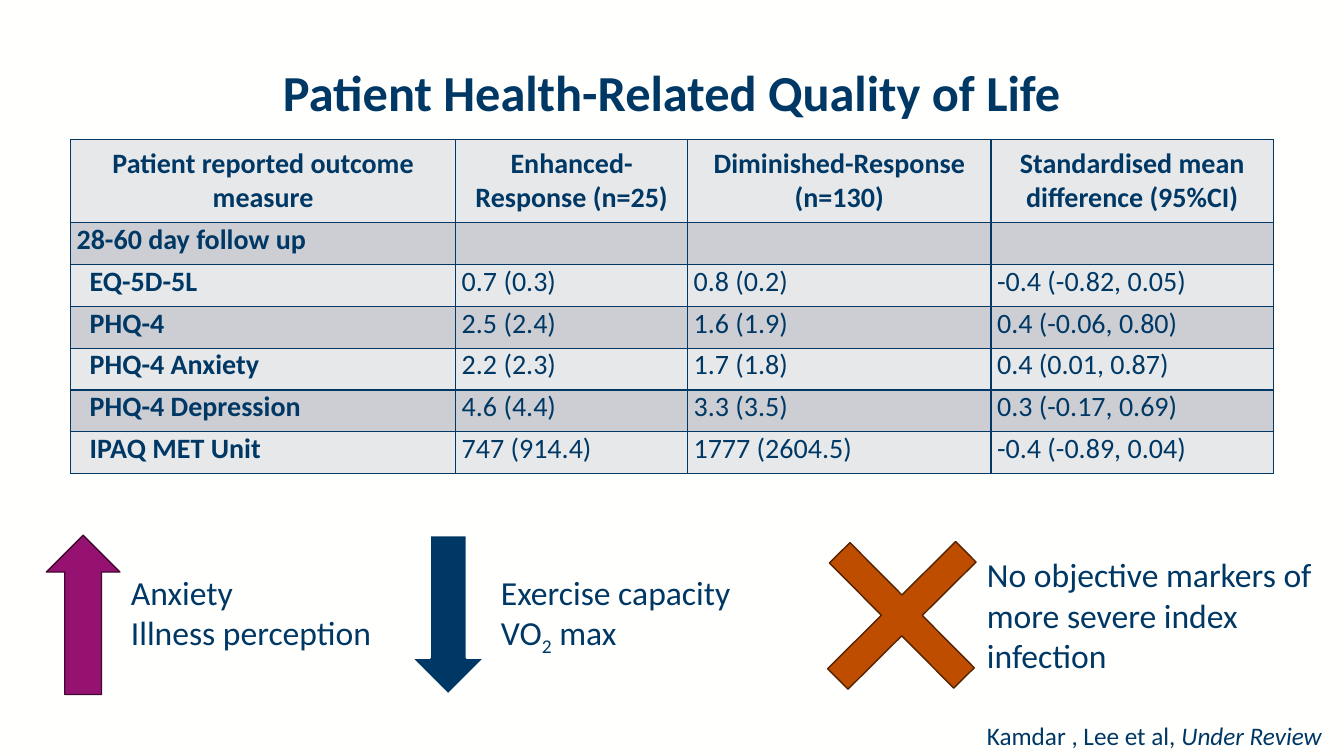
from dataclasses import dataclass

from lxml.etree import SubElement
from pptx import Presentation
from pptx.dml.color import RGBColor
from pptx.enum.shapes import MSO_SHAPE
from pptx.enum.text import MSO_ANCHOR, MSO_AUTO_SIZE, PP_ALIGN
from pptx.oxml.ns import qn
from pptx.util import Inches, Pt


@dataclass(frozen=True)
class Theme:
    font: str = "Calibri"
    navy: str = "003865"
    page: str = "FFFFFE"
    light_row: str = "E7E8EA"
    dark_row: str = "CCCED3"
    purple: str = "951271"
    purple_edge: str = "410832"
    orange: str = "BE4D00"
    orange_edge: str = "532200"
    title_size: int = 36
    message_size: int = 24
    table_size: int = 20
    citation_size: int = 18


THEME = Theme()

COLUMN_WIDTHS = (3.82, 2.3, 3.01, 2.8)
HEADER_HEIGHT, ROW_HEIGHT = 0.83, 0.415
CELL_INSET, MEASURE_INDENT = 0.06, 0.13
HEADERS = (
    "Patient reported outcome measure",
    "Enhanced-Response (n=25)",
    "Diminished-Response (n=130)",
    "Standardised mean difference (95%CI)",
)
OUTCOMES = (
    ("28-60 day follow up", "", "", ""),
    ("EQ-5D-5L", "0.7 (0.3)", "0.8 (0.2)", "-0.4 (-0.82, 0.05)"),
    ("PHQ-4", "2.5 (2.4)", "1.6 (1.9)", "0.4 (-0.06, 0.80)"),
    ("PHQ-4 Anxiety", "2.2 (2.3)", "1.7 (1.8)", "0.4 (0.01, 0.87)"),
    ("PHQ-4 Depression", "4.6 (4.4)", "3.3 (3.5)", "0.3 (-0.17, 0.69)"),
    ("IPAQ MET Unit", "747 (914.4)", "1777 (2604.5)", "-0.4 (-0.89, 0.04)"),
)


def color(value):
    return RGBColor.from_string(value)


def place(box):
    return [Inches(length) for length in box]


def format_spans(frame, size, bold=False):
    for para in frame.paragraphs:
        for span in para.runs:
            span.font.name = THEME.font
            span.font.size = Pt(size)
            span.font.bold = bold
            span.font.color.rgb = color(THEME.navy)


def add_title(page, box, text):
    title = page.shapes.title
    title.left, title.top, title.width, title.height = place(box)
    frame = title.text_frame
    frame.text = text
    frame.auto_size = MSO_AUTO_SIZE.NONE
    frame.vertical_anchor = MSO_ANCHOR.MIDDLE
    frame.paragraphs[0].alignment = PP_ALIGN.CENTER
    format_spans(frame, THEME.title_size, bold=True)


def add_text(page, box, lines, size):
    """Each line is a list of spans: (text, style), style being '', 'italic' or 'subscript'."""
    frame = page.shapes.add_textbox(*place(box)).text_frame
    frame.word_wrap = True
    frame.margin_right = 0
    for number, line in enumerate(lines):
        para = frame.add_paragraph() if number else frame.paragraphs[0]
        for text, style in line:
            span = para.add_run()
            span.text = text
            if style == "italic":
                span.font.italic = True
            elif style == "subscript":
                span.font._element.set("baseline", "-25000")
    format_spans(frame, size)


def add_borders(cell):
    properties = cell._tc.get_or_add_tcPr()
    for side in ("a:lnL", "a:lnR", "a:lnT", "a:lnB"):
        line = SubElement(properties, qn(side), w=str(Pt(1)))
        fill = SubElement(line, qn("a:solidFill"))
        SubElement(fill, qn("a:srgbClr"), val=THEME.navy)


def add_outcome_table(page, box):
    rows = (HEADERS, *OUTCOMES)
    table = page.shapes.add_table(len(rows), len(HEADERS), *place(box)).table
    for column, width in zip(table.columns, COLUMN_WIDTHS):
        column.width = Inches(width)
    for row_number, values in enumerate(rows):
        is_header = row_number == 0
        table.rows[row_number].height = Inches(HEADER_HEIGHT if is_header else ROW_HEIGHT)
        for column_number, text in enumerate(values):
            cell = table.cell(row_number, column_number)
            is_measure = column_number == 0
            indent = MEASURE_INDENT if is_measure and row_number > 1 else 0
            cell.margin_left = Inches(CELL_INSET + indent)
            cell.margin_right = Inches(CELL_INSET)
            cell.margin_top = cell.margin_bottom = 0
            add_borders(cell)
            cell.fill.solid()
            cell.fill.fore_color.rgb = color(THEME.dark_row if row_number % 2 else THEME.light_row)
            cell.text_frame.text = text
            format_spans(cell.text_frame, THEME.table_size, bold=is_header or is_measure)
            if is_header:
                cell.vertical_anchor = MSO_ANCHOR.MIDDLE
                cell.text_frame.paragraphs[0].alignment = PP_ALIGN.CENTER


def add_symbol(page, box, preset, fill, edge, edge_width=1, rotation=0):
    symbol = page.shapes.add_shape(preset, *place(box))
    symbol.shadow.inherit = False
    symbol.rotation = rotation
    symbol.fill.solid()
    symbol.fill.fore_color.rgb = color(fill)
    symbol.line.color.rgb = color(edge)
    symbol.line.width = Pt(edge_width)
    return symbol


def add_findings(page, box):
    left, top, width, height = box
    arrow_width, text_width = 0.73, 3.64
    text_top = top + 0.31

    # Raised anxiety and illness perception
    add_symbol(page, (left, top, arrow_width, height), MSO_SHAPE.UP_ARROW,
               THEME.purple, THEME.purple_edge)
    add_text(page, (left + 0.74, text_top, text_width, 0.91),
             [[("Anxiety", "")], [("Illness perception", "")]], THEME.message_size)

    # Reduced exercise capacity
    add_symbol(page, (left + 3.62, top, arrow_width, height), MSO_SHAPE.UP_ARROW,
               THEME.navy, THEME.page, edge_width=1.5, rotation=180)
    add_text(page, (left + 4.41, text_top, text_width, 0.91),
             [[("Exercise capacity", "")],
              [("VO", ""), ("2", "subscript"), (" max", "")]], THEME.message_size)

    # No sign of a more severe infection
    cross = add_symbol(page, (left + 7.61, top - 0.1, 1.75, 1.79), MSO_SHAPE.QUAD_ARROW,
                       THEME.orange, THEME.orange_edge, rotation=45.2)
    for number, value in enumerate((0.164, 0.082, 0)):
        cross.adjustments[number] = value
    add_text(page, (left + width - text_width, top + 0.14, text_width, 1.31),
             [[("No objective markers of more severe index infection", "")]],
             THEME.message_size)


def build_results_page(deck):
    page = deck.slides.add_slide(deck.slide_layouts[5])
    page.background.fill.solid()
    page.background.fill.fore_color.rgb = color(THEME.page)
    add_title(page, (1.52, 0.55, 10.29, 0.71), "Patient Health-Related Quality of Life")
    add_outcome_table(page, (0.7, 1.38, 11.94, 3.32))
    add_findings(page, (0.46, 5.31, 12.87, 1.58))
    add_text(page, (9.69, 7.1, 3.64, 0.4),
             [[("Kamdar , Lee et al, ", ""), ("Under Review", "italic")]],
             THEME.citation_size)


def main():
    deck = Presentation()
    deck.slide_width, deck.slide_height = Inches(13.33), Inches(7.5)
    build_results_page(deck)
    deck.save("out.pptx")


if __name__ == "__main__":
    main()
